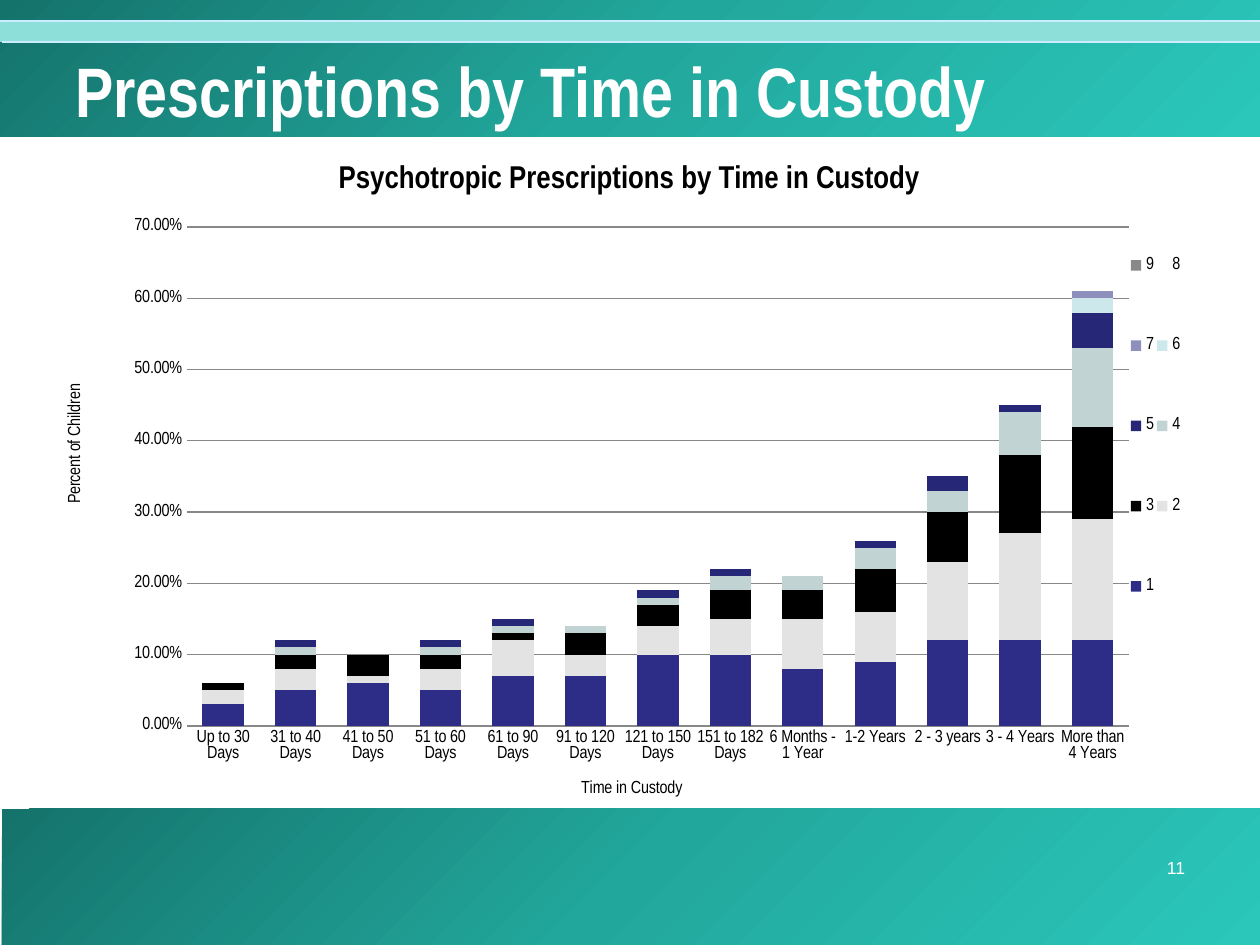
from lxml import etree
from pptx import Presentation, util as u
from pptx.chart.data import CategoryChartData
from pptx.dml.color import RGBColor
from pptx.enum import chart as ch, shapes, text
from pptx.oxml import parse_xml
from pptx.oxml.ns import nsdecls, qn

# Content
HEAD = "Prescriptions by Time in Custody"
TITLE = "Psychotropic Prescriptions by Time in Custody"
CAT_NAME, VAL_NAME = "Time in Custody", "Percent of Children"
PAGE = "11"
NARROW = "Arial Narrow"
GREY = "888888"
COLORS = ["2D2D87", "E3E3E3", "000000", "C1D3D3", "272778",
          "CCE8EA", "8F8FBD", "FFFFFF", GREY]
# Share of children with 1, 2, 3 ... prescriptions; the rest are zero
ROWS = [
    ("Up to 30 Days", [.03, .02, .01]),
    ("31 to 40 Days", [.05, .03, .02, .01, .01]),
    ("41 to 50 Days", [.06, .01, .03]),
    ("51 to 60 Days", [.05, .03, .02, .01, .01]),
    ("61 to 90 Days", [.07, .05, .01, .01, .01]),
    ("91 to 120 Days", [.07, .03, .03, .01]),
    ("121 to 150 Days", [.1, .04, .03, .01, .01]),
    ("151 to 182 Days", [.1, .05, .04, .02, .01]),
    ("6 Months - 1 Year", [.08, .07, .04, .02]),
    ("1-2 Years", [.09, .07, .06, .03, .01]),
    ("2 - 3 years", [.12, .11, .07, .03, .02]),
    ("3 - 4 Years", [.12, .15, .11, .06, .01]),
    ("More than 4 Years", [.12, .17, .13, .11, .05, .02, .01]),
]
STOPS = [(0, "14736B"), (50, "22A79C"), (100, "2BC7BB")]

# Places in px: left, top, width, height
BANDS = [(2, 809, 1258, 136), (0, 0, 1260, 137)]
STRIPE = (0, 21, 1260, 21)
RULES = [(0, 21), (2, 42)]
CHART = (63, 136, 1134, 687)


def px(*vals):
    return [u.Emu(round(v * 914400 / 126)) for v in vals]


def rgb(code):
    return RGBColor.from_string(code)


def style(font, size, name=NARROW, color="000000", bold=False):
    font.size, font.name, font.bold = u.Pt(size), name, bold
    font.color.rgb = rgb(color)


def block(box):
    shape = slide.shapes.add_shape(shapes.MSO_SHAPE.RECTANGLE, *px(*box))
    shape.shadow.inherit = False
    shape.line.fill.background()
    return shape


def blend(shape):
    stops = "".join(f'<a:gs pos="{p * 1000}"><a:srgbClr val="{c}"/></a:gs>'
                    for p, c in STOPS)
    fill = parse_xml(f'<a:gradFill {nsdecls("a")} rotWithShape="1"><a:gsLst>{stops}'
                     '</a:gsLst><a:lin ang="2700000" scaled="1"/></a:gradFill>')
    shape._element.spPr.find(qn("a:prstGeom")).addnext(fill)


def label(box, words, align, anchor, *font):
    frame = slide.shapes.add_textbox(*px(*box)).text_frame
    frame.word_wrap, frame.vertical_anchor = True, anchor
    para = frame.paragraphs[0]
    para.text, para.alignment = words, align
    style(para.font, *font)


def place(item, index, x, y, w=None, h=None, inner=False):
    """Fix a chart part at a place given in slide px."""
    for old in item.findall(qn("c:layout")):
        item.remove(old)
    layout = etree.Element(qn("c:layout"))
    manual = etree.SubElement(layout, qn("c:manualLayout"))
    left, top, wide, high = CHART
    vals = [("layoutTarget", "inner")] if inner else []
    vals += [("xMode", "edge"), ("yMode", "edge"),
             ("x", round((x - left) / wide, 4)), ("y", round((y - top) / high, 4))]
    if w:
        vals += [("w", round(w / wide, 4)), ("h", round(h / high, 4))]
    for tag, val in vals:
        etree.SubElement(manual, qn("c:" + tag)).set("val", str(val))
    item.insert(index, layout)


def name(title, words, size, bold, x, y):
    para = title.text_frame.paragraphs[0]
    para.text = words
    style(para.font, size, bold=bold)
    place(title._element, 1, x, y)


prs = Presentation()
prs.slide_width, prs.slide_height = px(1260, 945)
slide = prs.slides.add_slide(prs.slide_layouts[6])

# Bands, stripe and rules
for box in BANDS:
    blend(block(box))
stripe = block(STRIPE)
stripe.fill.solid()
stripe.fill.fore_color.rgb = rgb("8DDFD9")
for x, y in RULES:
    rule = slide.shapes.add_connector(shapes.MSO_CONNECTOR.STRAIGHT, *px(x, y, 1260, y))
    rule.line.color.rgb, rule.line.width = rgb("CCECFF"), u.Pt(1.5)
    etree.SubElement(rule._element.spPr, qn("a:effectLst"))

label((63, 10, 1144, 158), HEAD, text.PP_ALIGN.LEFT, text.MSO_ANCHOR.MIDDLE,
      40, NARROW, "FFFFFF", True)

# Chart
data = CategoryChartData(number_format="0.00%")
data.categories = [cat for cat, _ in ROWS]
for i in range(len(COLORS)):
    data.add_series(str(i + 1), [v[i] if i < len(v) else 0 for _, v in ROWS])
chart = slide.shapes.add_chart(ch.XL_CHART_TYPE.COLUMN_STACKED, *px(*CHART), data).chart
style(chart.font, 10)
plot = chart.plots[0]
plot.gap_width, plot.overlap, plot.vary_by_categories = 75, 100, False
for ser, color in zip(plot.series, COLORS):
    ser.format.fill.solid()
    ser.format.fill.fore_color.rgb = rgb(color)
place(plot._element.getparent(), 0, 187, 227, 942, 499, True)

# Axes
cat, val = chart.category_axis, chart.value_axis
for axis in (cat, val):
    axis.major_tick_mark = axis.minor_tick_mark = ch.XL_TICK_MARK.NONE
cat.format.line.color.rgb = rgb(GREY)
val.format.line.fill.background()
val.minimum_scale, val.maximum_scale, val.major_unit = 0, .7, .1
val.major_gridlines.format.line.color.rgb = rgb(GREY)
val.tick_labels.number_format = "0.00%"
val.tick_labels.number_format_is_linked = False

# Chart titles and legend
name(chart.chart_title, TITLE, 18, True, 333, 157)
name(cat.axis_title, CAT_NAME, 10, False, 578, 777)
name(val.axis_title, VAL_NAME, 10, False, 63, 381)
chart.has_legend = True
chart.legend.position = ch.XL_LEGEND_POSITION.RIGHT
chart.legend.include_in_layout = False
style(chart.legend.font, 10)
place(chart.legend._element, 1, 1128, 193, 55, 466)

label((1134, 851, 84, 53), PAGE, text.PP_ALIGN.CENTER, text.MSO_ANCHOR.TOP,
      10, "Arial", "FFFFFF")

prs.save("out.pptx")
